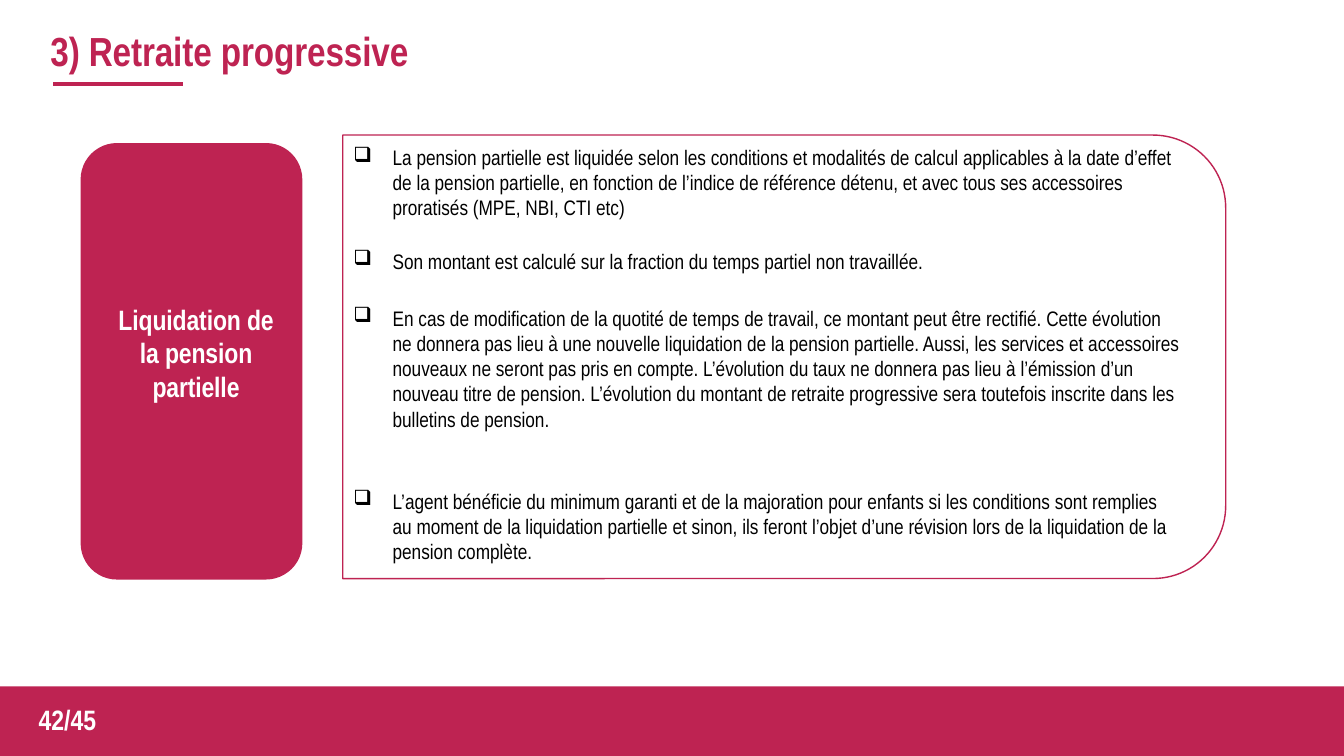
from dataclasses import dataclass

from lxml.etree import SubElement
from pptx import Presentation
from pptx.dml.color import RGBColor
from pptx.enum.shapes import MSO_CONNECTOR as Connector, MSO_SHAPE as Preset
from pptx.enum.text import MSO_ANCHOR as Anchor, PP_ALIGN as Align
from pptx.oxml.ns import qn
from pptx.util import Pt


@dataclass(frozen=True)
class Theme:
    font: str = "Arial Narrow"
    accent: RGBColor = RGBColor(0xBE, 0x23, 0x52)
    ink: RGBColor = RGBColor(0, 0, 0)
    white: RGBColor = RGBColor(0xFF, 0xFF, 0xFF)
    title: int = 29
    label: int = 20
    body: int = 15


class SlideBuilder:
    """Holds the theme and the current slide; lengths are in points."""

    def __init__(self, page, theme):
        self.page = page
        self.theme = theme

    def shape(self, preset, left, top, width, height, filled=True,
              radius=None, rotation=0):
        box = self.page.shapes.add_shape(
            preset, Pt(left), Pt(top), Pt(width), Pt(height))
        box.shadow.inherit = False
        box.rotation = rotation
        if radius is not None:
            box.adjustments[0] = radius / min(width, height)
        if filled:
            box.fill.solid()
            box.fill.fore_color.rgb = self.theme.accent
            box.line.fill.background()
        else:
            box.fill.background()
            box.line.color.rgb = self.theme.accent
            box.line.width = Pt(1)

    def rule(self, left, right, y, weight):
        line = self.page.shapes.add_connector(
            Connector.STRAIGHT, Pt(left), Pt(y), Pt(right), Pt(y))
        line.line.color.rgb = self.theme.accent
        line.line.width = Pt(weight)
        SubElement(line._element.spPr, qn("a:effectLst"))

    def text(self, left, top, width, height, paragraphs, size, color,
             bold=False, align=Align.LEFT, anchor=Anchor.TOP, inset=0,
             gap=0, bullets=False, tracking=0):
        box = self.page.shapes.add_textbox(
            Pt(left), Pt(top), Pt(width), Pt(height))
        frame = box.text_frame
        frame.word_wrap = True
        frame.vertical_anchor = anchor
        frame.margin_left = frame.margin_right = frame.margin_bottom = 0
        frame.margin_top = Pt(inset)
        for index, words in enumerate(paragraphs):
            para = frame.add_paragraph() if index else frame.paragraphs[0]
            if bullets:
                self.bullet(para)
            para.alignment = align
            if index:
                para.space_before = Pt(gap)
            span = para.add_run()
            span.text = words
            span.font.name = self.theme.font
            span.font.size = Pt(size)
            span.font.bold = bold
            span.font.color.rgb = color
            if tracking:
                span._r.get_or_add_rPr().set("spc", str(int(tracking * 100)))

    def bullet(self, para):
        props = para._p.get_or_add_pPr()
        props.set("marL", str(Pt(28.5)))
        props.set("indent", str(-Pt(28)))
        SubElement(props, qn("a:buChar")).set("char", "❑")


CALCULATION = [
    "La pension partielle est liquidée selon les conditions et modalités de "
    "calcul applicables à la date d’effet de la pension partielle, en fonction "
    "de l’indice de référence détenu, et avec tous ses accessoires proratisés "
    "(MPE, NBI, CTI etc)",
    "Son montant est calculé sur la fraction du temps partiel non travaillée.",
]
REVISION = [
    "En cas de modification de la quotité de temps de travail, ce montant peut "
    "être rectifié. Cette évolution ne donnera pas lieu à une nouvelle "
    "liquidation de la pension partielle. Aussi, les services et accessoires "
    "nouveaux ne seront pas pris en compte. L’évolution du taux ne donnera pas "
    "lieu à l’émission d’un nouveau titre de pension. L’évolution du montant de "
    "retraite progressive sera toutefois inscrite dans les bulletins de pension.",
    "L’agent bénéficie du minimum garanti et de la majoration pour enfants si "
    "les conditions sont remplies au moment de la liquidation partielle et "
    "sinon, ils feront l’objet d’une révision lors de la liquidation de la "
    "pension complète.",
]


def main():
    deck = Presentation()
    deck.slide_width, deck.slide_height = Pt(960), Pt(540)
    page = deck.slides.add_slide(deck.slide_layouts[6])
    theme = Theme()
    build = SlideBuilder(page, theme)

    # Footer band
    build.shape(Preset.RECTANGLE, 0, 490.3, 960, 49.7)

    # Title and its underline
    build.text(36, 17.3, 665, 36, ["3) Retraite progressive"], theme.title,
               theme.accent, bold=True, anchor=Anchor.MIDDLE, inset=1,
               tracking=-0.1)
    build.rule(38.2, 131, 59.8, 3)

    # Outlined panel, turned so that its rounded corners are on the right
    left, top, width, height = 244.8, 96.5, 630.7, 316.8
    build.shape(Preset.ROUND_2_SAME_RECTANGLE,
                left + (width - height) / 2, top + (height - width) / 2,
                height, width, filled=False, radius=52, rotation=90)

    # Bulleted text in the panel
    build.text(252, 102.2, 592.6, 93.6, CALCULATION, theme.body, theme.ink,
               inset=1, gap=20, bullets=True)
    build.text(252, 206.6, 592.6, 237.6, REVISION, theme.body, theme.ink,
               inset=11.5, gap=40.6, bullets=True)

    # Topic card
    build.shape(Preset.ROUNDED_RECTANGLE, 57.6, 102.2, 158.4, 311.8, radius=26)
    build.text(80, 180, 120, 114, ["Liquidation de la pension partielle"],
               theme.label, theme.white, bold=True, align=Align.CENTER,
               inset=36, tracking=-0.1)

    # Page number
    build.text(12.2, 498.2, 72, 31.7, ["42/45"], theme.label, theme.white,
               bold=True, align=Align.CENTER, inset=3.6)

    deck.save("out.pptx")


if __name__ == "__main__":
    main()
